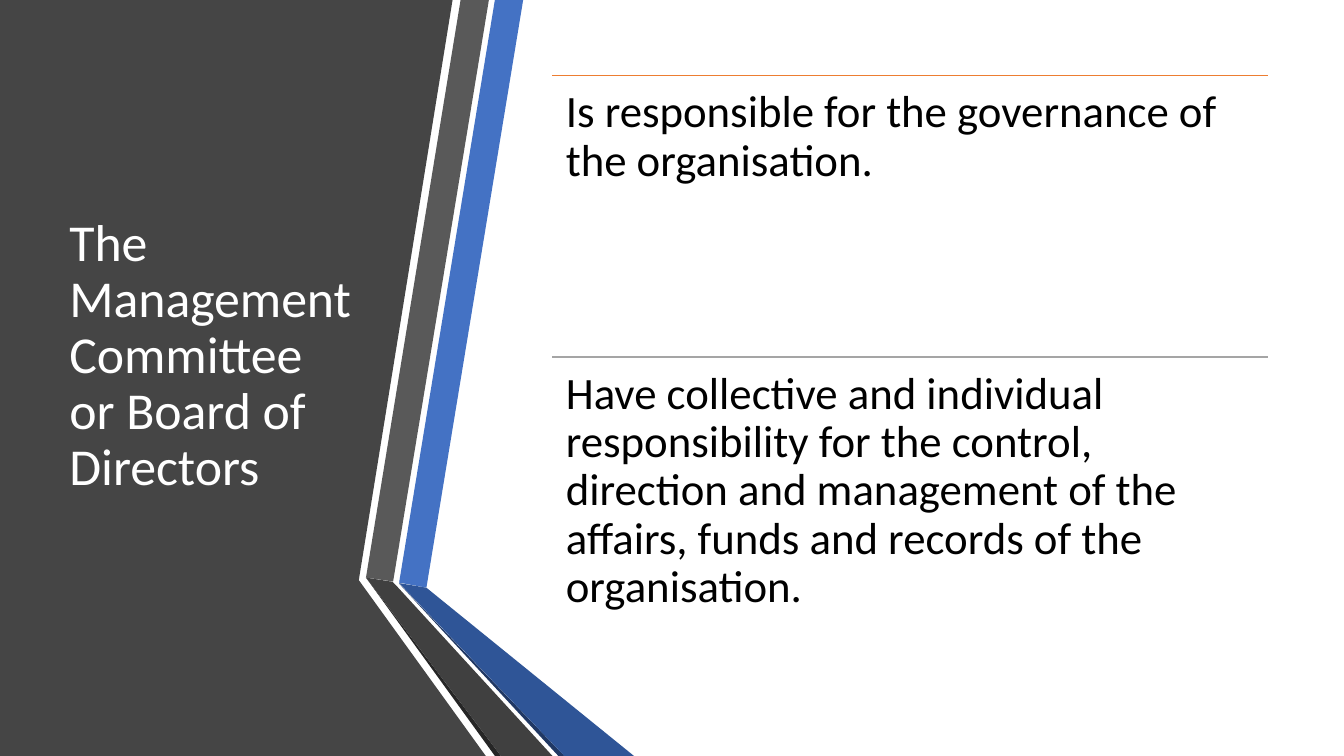
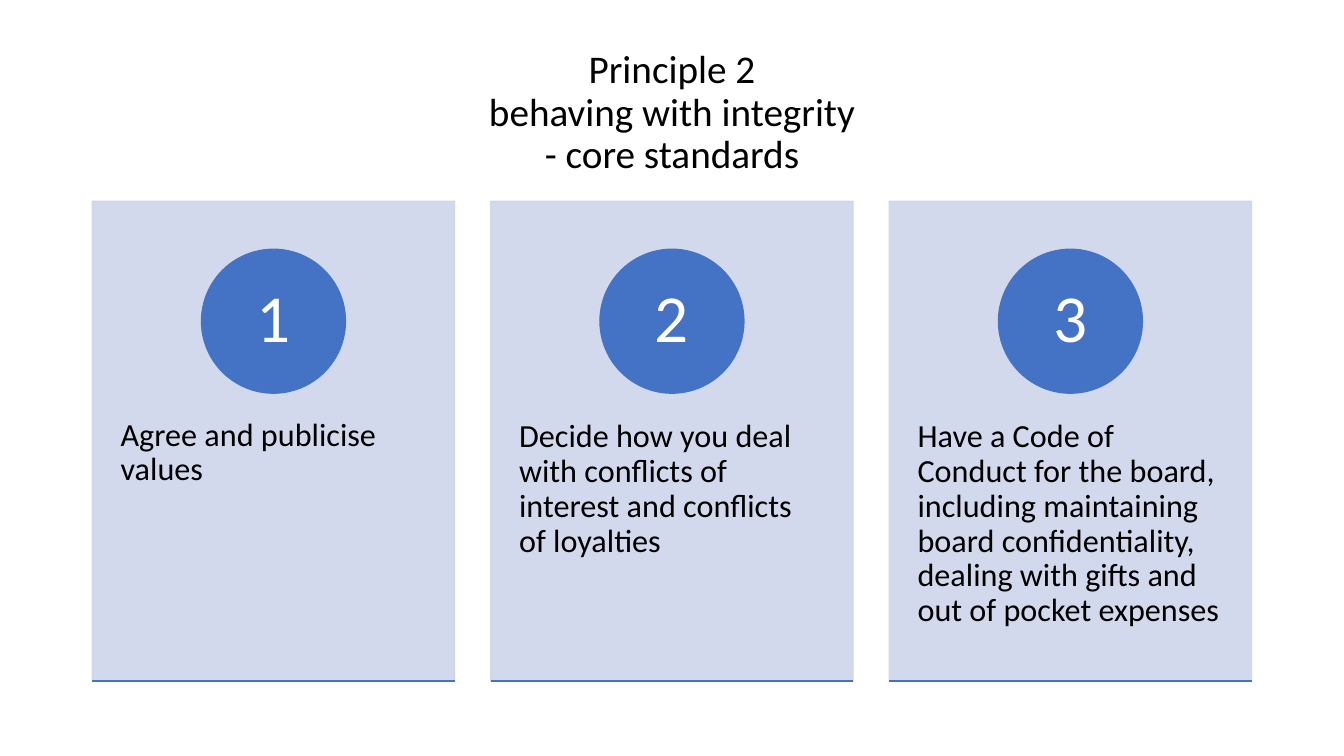
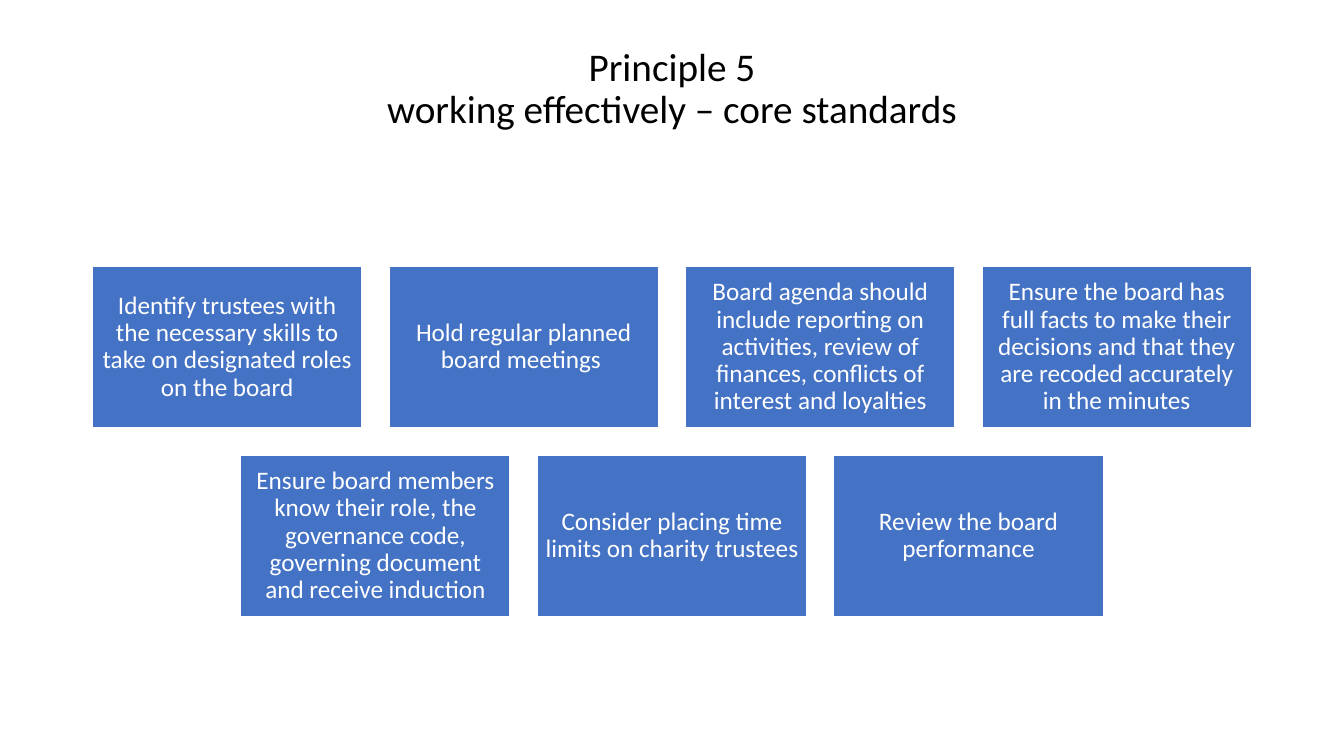
from lxml.etree import SubElement
from pptx import Presentation
from pptx.dml.color import RGBColor
from pptx.enum.shapes import MSO_CONNECTOR, MSO_SHAPE
from pptx.enum.text import MSO_ANCHOR as Anchor, PP_ALIGN as Align
from pptx.oxml.ns import qn
from pptx.util import Pt

FONT = "Calibri"
BLACK, WHITE = "000000", "FFFFFF"
BLUE, PALE = "4472C4", "CFD5EA"
ORANGE, GREY = "ED7D31", "A5A5A5"
HEAD = (66, 28.8, 828, 104.4)

RIBBONS = [
    ("454545", [(0, 0), (323.3, 0), (256.3, 414.4), (347, 540), (0, 540)]),
    (BLUE, [(285.1, 416.2), (304.6, 419.8), (373.7, 0), (353.5, 0)]),
    ("595959", [(349.2, 0), (329, 0), (261.4, 412.6), (280.8, 415.4)]),
    ("262626", [(261.4, 412.6), (353.5, 540), (357.8, 540)]),
    ("203864", [(285.1, 416.9), (398.9, 540), (403.2, 540)]),
    ("2F5597", [(285.1, 416.5), (403.2, 540), (452.9, 540), (304.6, 419.8)]),
    ("404040", [(394.6, 540), (284.4, 419.8), (280.4, 415.6),
                (261.4, 412.6), (357.8, 540)]),
]
DUTIES = [
    (ORANGE, "Is responsible for the governance of the organisation."),
    (GREY, "Have collective and individual responsibility for the control, "
           "direction and management of the affairs, funds and records of "
           "the organisation."),
]
CARDS = [
    "Agree and publicise values",
    "Decide how you deal with conflicts of interest and conflicts of loyalties",
    "Have a Code of Conduct for the board, including maintaining board "
    "confidentiality, dealing with gifts and out of pocket expenses",
]
TILES = [
    ["Identify trustees with the necessary skills to take on designated roles "
     "on the board",
     "Hold regular planned board meetings ",
     "Board agenda should include reporting on activities, review of finances, "
     "conflicts of interest and loyalties",
     "Ensure the board has full facts to make their decisions and that they "
     "are recoded accurately in the minutes"],
    ["Ensure board members know their role, the governance code, governing "
     "document and receive induction",
     "Consider placing time limits on charity trustees",
     "Review the board performance"],
]


def tint(part, color):
    """Give a fill or a font a solid colour."""
    if hasattr(part, "solid"):
        part.solid()
        part.fore_color.rgb = RGBColor.from_string(color)
    else:
        part.color.rgb = RGBColor.from_string(color)


def write(shape, lines, size, color, align=Align.LEFT, anchor=Anchor.TOP,
          pads=(7.2, 3.6, 7.2, 3.6)):
    """Set the lines as one paragraph; pads are left, top, right, bottom."""
    frame = shape.text_frame
    frame.word_wrap = True
    frame.vertical_anchor = anchor
    (frame.margin_left, frame.margin_top,
     frame.margin_right, frame.margin_bottom) = map(Pt, pads)
    para = frame.paragraphs[0]
    para.alignment = align
    para.line_spacing = 0.9
    for i, line in enumerate(lines):
        if i:
            para.add_line_break()
        run = para.add_run()
        run.text = line
        run.font.name = FONT
        run.font.size = Pt(size)
        tint(run.font, color)


def label(slide, box, lines, size, color, **style):
    shape = slide.shapes.add_textbox(*map(Pt, box))
    write(shape, lines, size, color, **style)


def block(slide, kind, box, fill, edge, alpha=None):
    """Add a filled preset shape; alpha is its opacity in percent."""
    shape = slide.shapes.add_shape(kind, *map(Pt, box))
    shape.shadow.inherit = False
    tint(shape.fill, fill)
    tint(shape.line.fill, edge)
    shape.line.width = Pt(1)
    if alpha:
        for node in shape._element.spPr.iter(qn("a:srgbClr")):
            SubElement(node, qn("a:alpha"), val=str(alpha * 1000))
    return shape


def rule(slide, x, y, w, color):
    line = slide.shapes.add_connector(
        MSO_CONNECTOR.STRAIGHT, Pt(x), Pt(y), Pt(x + w), Pt(y))
    tint(line.line.fill, color)
    line.line.width = Pt(1)
    SubElement(line._element.spPr, qn("a:effectLst"))


def ribbon(slide, color, points):
    (x, y), *rest = points
    pen = slide.shapes.build_freeform(Pt(x), Pt(y), scale=1.0)
    pen.add_line_segments([(Pt(a), Pt(b)) for a, b in rest], close=True)
    shape = pen.convert_to_shape()
    shape.shadow.inherit = False
    tint(shape.fill, color)
    shape.line.fill.background()


def header(slide, lines, base=3.6):
    """Add a centred title; a larger base pad lifts it."""
    label(slide, HEAD, lines, 28, BLACK, align=Align.CENTER,
          anchor=Anchor.MIDDLE, pads=(7.2, 3.6, 7.2, base))


def duties(slide, box, items):
    x, y, w, h = box
    step = h / len(items)
    for i, (color, text) in enumerate(items):
        top = y + i * step
        rule(slide, x, top, w, color)
        label(slide, (x, top, w, step), [text], 32, BLACK, pads=(9.6,) * 4)


def card(slide, box, number, text):
    x, y, w, h = box
    block(slide, MSO_SHAPE.RECTANGLE, box, PALE, PALE, alpha=90)
    label(slide, (x, y + 0.38 * h, w, 0.6 * h), [text], 23, BLACK,
          pads=(20.2, 26, 20.2, 26))
    d = 0.3 * h
    disc = block(slide, MSO_SHAPE.OVAL,
                 (x + (w - d) / 2, y + 0.1 * h, d, d), BLUE, BLUE)
    write(disc, [str(number)], 48, WHITE, align=Align.CENTER,
          anchor=Anchor.MIDDLE, pads=(8, 0.8, 8, 0.8))
    rule(slide, x, y + h, w, BLUE)


def cards(slide, box, items):
    """Place cards in a row, with gaps a tenth of their width."""
    x, y, w, h = box
    n = len(items)
    wide = w / (n + 0.1 * (n - 1))
    for i, text in enumerate(items):
        card(slide, (x + i * 1.1 * wide, y, wide, h), i + 1, text)


def tiles(slide, box, rows):
    """Place centred rows of tiles, with gaps a tenth of their width."""
    x, y, w, h = box
    most = max(map(len, rows))
    wide = w / (most + 0.1 * (most - 1))
    gap = 0.1 * wide
    high = (h - gap * (len(rows) - 1)) / len(rows)
    for i, row in enumerate(rows):
        left = x + (most - len(row)) * (wide + gap) / 2
        for j, text in enumerate(row):
            spot = (left + j * (wide + gap), y + i * (high + gap), wide, high)
            tile = block(slide, MSO_SHAPE.RECTANGLE, spot, BLUE, WHITE)
            write(tile, [text], 18, WHITE, align=Align.CENTER,
                  anchor=Anchor.MIDDLE, pads=(5.4,) * 4)


def main():
    deck = Presentation()
    deck.slide_width, deck.slide_height = Pt(960), Pt(540)
    blank = deck.slide_layouts[6]

    board = deck.slides.add_slide(blank)
    for color, points in RIBBONS:
        ribbon(board, color, points)
    label(board, (42.5, 54, 218.9, 401.8),
          ["The Management Committee or Board of Directors"], 37, WHITE,
          anchor=Anchor.MIDDLE)
    duties(board, (394.6, 54, 511.2, 401.8), DUTIES)

    honest = deck.slides.add_slide(blank)
    header(honest, ["Principle 2", "behaving with integrity",
                    "- core standards"])
    cards(honest, (66, 143.8, 828, 342.6), CARDS)

    work = deck.slides.add_slide(blank)
    header(work, ["Principle 5", "working effectively – core standards"],
           base=37)
    tiles(work, (66, 190.2, 828, 250.3), TILES)

    deck.save("out.pptx")


if __name__ == "__main__":
    main()
